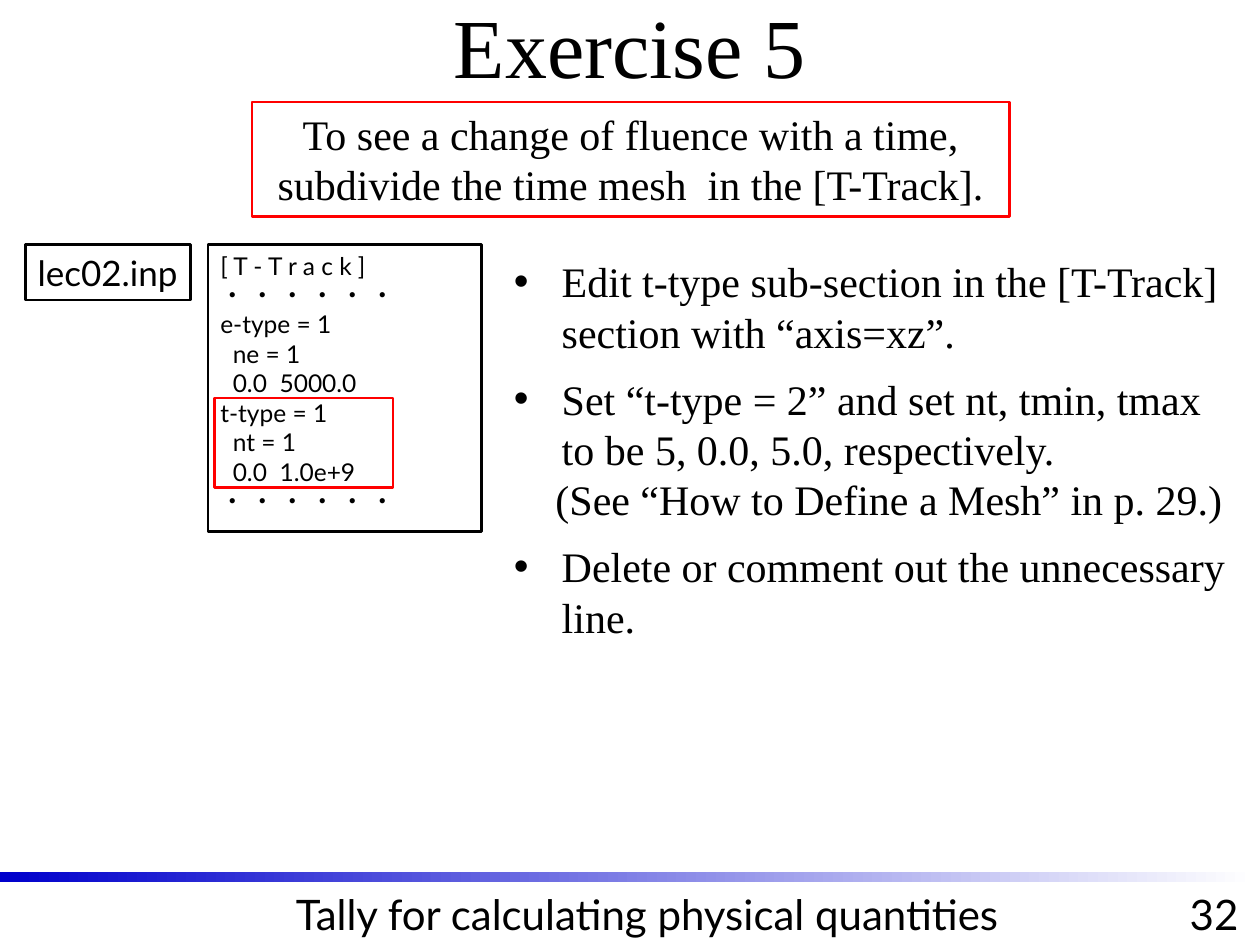
from lxml import etree
from pptx import Presentation
from pptx.dml.color import RGBColor
from pptx.enum.shapes import MSO_SHAPE
from pptx.enum.text import MSO_ANCHOR, PP_ALIGN
from pptx.oxml.ns import qn
from pptx.util import Inches, Pt

RECT = MSO_SHAPE.RECTANGLE
LEFT, CENTER = PP_ALIGN.LEFT, PP_ALIGN.CENTER
TOP, MIDDLE = MSO_ANCHOR.TOP, MSO_ANCHOR.MIDDLE
SERIF, SANS = "Times New Roman", "Lato"
COLORS = {"ink": "000000", "accent": "FF0000", "paper": "FFFFFF", "bar": "0000CC"}
DOTS = "・ ・ ・ ・ ・ ・"
CODE = [
    "[ T - T r a c k ]",
    DOTS,
    "e-type = 1",
    "  ne = 1",
    "  0.0  5000.0",
    "t-type = 1",
    "  nt = 1",
    "  0.0  1.0e+9",
    DOTS,
]
STEPS = [
    ("Edit t-type sub-section in the [T-Track] section with “axis=xz”.", True),
    ("Set “t-type = 2” and set nt, tmin, tmax to be 5, 0.0, 5.0, respectively.", True),
    ("(See “How to Define a Mesh” in p. 29.)", False),
    ("Delete or comment out the unnecessary line.", True),
]


def color(name):
    return RGBColor.from_string(COLORS[name])


def add_panel(slide, box, line=None, fill=None):
    panel = slide.shapes.add_shape(RECT, *map(Inches, box))
    panel.shadow.inherit = False
    if fill:
        panel.fill.solid()
        panel.fill.fore_color.rgb = color(fill)
    else:
        panel.fill.background()
    if line:
        panel.line.color.rgb = color(line)
        panel.line.width = Pt(1.5)
    else:
        panel.line.fill.background()
    return panel


def add_label(slide, box):
    return slide.shapes.add_textbox(*map(Inches, box))


def write(shape, lines, size, font=SANS, align=LEFT, anchor=TOP, wrap=True):
    frame = shape.text_frame
    frame.word_wrap = wrap
    frame.vertical_anchor = anchor
    frame.text = "\n".join(lines)
    formats = {"size": Pt(size), "name": font}
    for paragraph in frame.paragraphs:
        paragraph.alignment = align
        for run in paragraph.runs:
            for key, value in formats.items():
                setattr(run.font, key, value)
            run.font.color.rgb = color("ink")
    return frame


def indent(paragraph, margin, first=0):
    properties = paragraph._p.get_or_add_pPr()
    properties.set("marL", str(Inches(margin)))
    properties.set("indent", str(Inches(first)))
    return properties


def add_heading(slide, title_box, goal_box):
    write(add_label(slide, title_box), ["Exercise 5"], 48, SERIF, CENTER, MIDDLE)
    goal = "To see a change of fluence with a time, subdivide the time mesh  in the [T-Track]."
    write(add_panel(slide, goal_box, "accent"), [goal], 24, SERIF, CENTER)


def add_steps(slide, box):
    frame = write(add_label(slide, box), [text for text, _ in STEPS], 24, SERIF)
    for number, (paragraph, (_, bulleted)) in enumerate(zip(frame.paragraphs, STEPS)):
        if not bulleted:
            indent(paragraph, 0.33)
            continue
        properties = indent(paragraph, 0.38, -0.38)
        if number:
            paragraph.space_before = Pt(9.5)
        etree.SubElement(properties, qn("a:buFont"), typeface="Arial")
        etree.SubElement(properties, qn("a:buChar"), char="•")


def add_input_file(slide, box):
    left, top, width, height = box
    write(add_panel(slide, (left, top, 1.31, 0.44), "ink"), ["lec02.inp"], 20,
          anchor=MIDDLE, wrap=False)
    listing_left = left + 1.45
    listing = (listing_left, top, width - 1.45, height)
    write(add_panel(slide, listing, "ink", "paper"), CODE, 14)
    add_panel(slide, (listing_left + 0.05, top + 1.22, 1.42, 0.71), "accent")


def add_footer(slide, box):
    left, top, width, height = box
    bar = add_panel(slide, (left, top, width, 0.08))
    bar.fill.gradient()
    bar.fill.gradient_angle = 0
    for stop, name in zip(bar.fill.gradient_stops, ("bar", "paper")):
        stop.color.rgb = color(name)
    text_top, text_height = top + 0.08, height - 0.08
    for text, x, w in (("Tally for calculating physical quantities", 2.12, 6.03),
                       ("32", 9.24, 0.79)):
        write(add_label(slide, (left + x, text_top, w, text_height)), [text], 24,
              align=CENTER)


def main():
    deck = Presentation()
    deck.slide_width, deck.slide_height = Inches(10), Inches(7.5)
    slide = deck.slides.add_slide(deck.slide_layouts[6])
    add_footer(slide, (0, 6.92, 9.96, 0.58))
    add_heading(slide, (0.25, -0.27, 9.5, 1.25), (2, 0.81, 6.01, 0.91))
    add_steps(slide, (3.98, 1.98, 5.85, 3.2))
    add_input_file(slide, (0.2, 1.94, 3.62, 2.28))
    deck.save("out.pptx")


if __name__ == "__main__":
    main()
